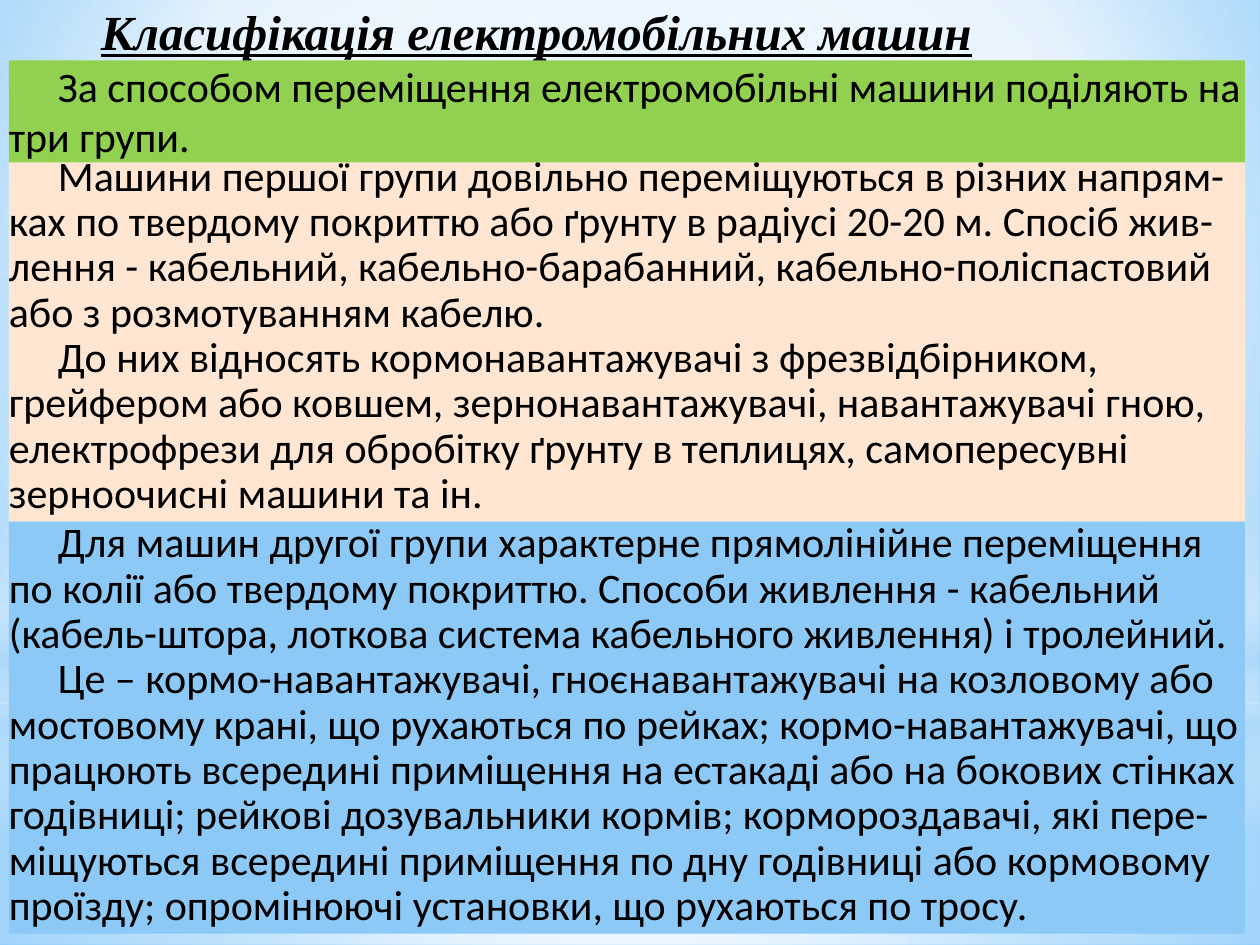
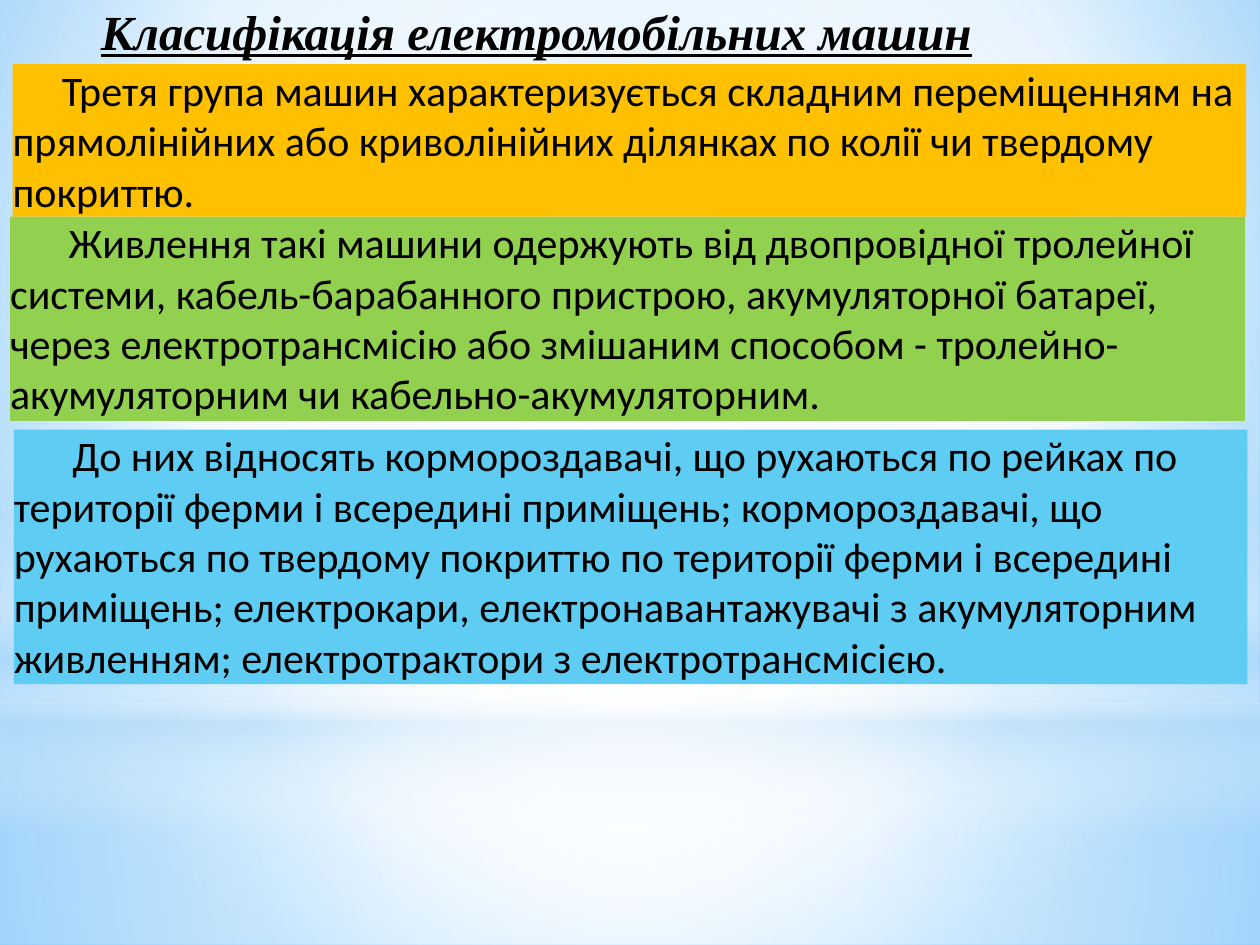
from dataclasses import dataclass

from pptx import Presentation
from pptx.dml.color import RGBColor
from pptx.enum.shapes import MSO_SHAPE as Shape
from pptx.enum.text import MSO_ANCHOR as Anchor, MSO_AUTO_SIZE as AutoSize, PP_ALIGN as Align
from pptx.oxml import parse_xml
from pptx.oxml.ns import nsdecls, qn
from pptx.util import Inches, Pt


@dataclass(frozen=True)
class Theme:
    text: str = "000000"
    white: str = "FFFFFF"
    haze: str = "B4DCFA"
    sky_inner: str = "9ED5FF"
    sky_outer: str = "5BB9FF"
    green: str = "92D050"
    peach: str = "FFE6D3"
    blue: str = "8CC9F7"
    amber: str = "FFC000"
    cyan: str = "5ECCF3"
    title_font: str = "Times New Roman"
    body_font: str = "Calibri"
    title_size: int = 28
    body_size: int = 24
    indent: float = 0.39


THEME = Theme()
TITLE = "Класифікація електромобільних машин"
TITLE_BOX = (0.8, 0.01, 6.99, 0.47)
CENTRE = (50, 50, 50, 50)

# Master haze: preset, box, gradient stops (position, colour, opacity), focus
HAZE = [
    (Shape.RECTANGLE, (0, 5.58, 10, 1.92),
     [(0, THEME.white, 91), (37, THEME.white, 76), (100, THEME.haze, 79)], CENTRE),
    (Shape.RECTANGLE, (0, 0, 10, 5.58),
     [(0, THEME.white, 89), (48, THEME.white, 62), (100, THEME.haze, 79)], CENTRE),
    (Shape.RECTANGLE, (0, 4.12, 10, 2.5),
     [(0, THEME.white, 0), (29, THEME.white, 30), (45, THEME.haze, 40),
      (55, THEME.white, 26), (65, THEME.haze, 60), (100, THEME.white, 0)], None),
    (Shape.OVAL, (0, 1.75, 10, 5.58),
     [(0, THEME.white, 100), (56, THEME.white, 0)], CENTRE),
]

# Panels of each slide, from back to front: box, colour, line spacing, paragraphs
GROUPS_ONE_AND_TWO = [
    ((0.07, 1.23, 9.81, 2.91), THEME.peach, 0.9, [
        "Машини першої групи довільно переміщуються в різних напрям-ках по твердому "
        "покриттю або ґрунту в радіусі 20-20 м. Спосіб жив-лення - кабельний, "
        "кабельно-барабанний, кабельно-поліспастовий або з розмотуванням кабелю.",
        "До них відносять кормонавантажувачі з фрезвідбірником, грейфером або ковшем, "
        "зернонавантажувачі, навантажувачі гною, електрофрези для обробітку ґрунту в "
        "теплицях, самопересувні зерноочисні машини та ін."]),
    ((0.07, 4.14, 9.81, 3.27), THEME.blue, 0.9, [
        "Для машин другої групи характерне прямолінійне переміщення по колії або твердому "
        "покриттю. Способи живлення - кабельний (кабель-штора, лоткова система кабельного "
        "живлення) і тролейний.",
        "Це – кормо-навантажувачі, гноєнавантажувачі на козловому або мостовому крані, що "
        "рухаються по рейках; кормо-навантажувачі, що працюють всередині приміщення на "
        "естакаді або на бокових стінках годівниці; рейкові дозувальники кормів; "
        "кормороздавачі, які пере-міщуються всередині приміщення по дну годівниці або "
        "кормовому проїзду; опромінюючі установки, що рухаються по тросу."]),
    ((0.07, 0.48, 9.81, 0.81), THEME.green, 1.0, [
        "За способом переміщення електромобільні машини поділяють на три групи."]),
]
GROUP_THREE = [
    ((0.08, 1.72, 9.8, 1.62), THEME.green, 1.0, [
        " Живлення такі машини одержують від двопровідної тролейної системи, "
        "кабель-барабанного пристрою, акумуляторної батареї, через електротрансмісію або "
        "змішаним способом - тролейно-акумуляторним чи кабельно-акумуляторним."]),
    ((0.1, 0.51, 9.79, 1.21), THEME.amber, 1.0, [
        "Третя група машин характеризується складним переміщенням на прямолінійних або "
        "криволінійних ділянках по колії чи твердому покриттю."]),
    ((0.11, 3.41, 9.79, 2.02), THEME.cyan, 1.0, [
        " До них відносять кормороздавачі, що рухаються по рейках по території ферми і "
        "всередині приміщень; кормороздавачі, що рухаються по твердому покриттю по "
        "території ферми і всередині приміщень; електрокари, електронавантажувачі з "
        "акумуляторним живленням; електротрактори з електротрансмісією."]),
]


def inches(box):
    return [Inches(length) for length in box]


def set_gradient(owner, stops, focus):
    """Fill a shape or a background; without a focus the gradient runs downwards."""
    owner.fill.gradient()
    stop_xml = "".join(
        f'<a:gs pos="{position * 1000}"><a:srgbClr val="{colour}">'
        f'<a:alpha val="{opacity * 1000}"/></a:srgbClr></a:gs>'
        for position, colour, opacity in stops)
    if focus:
        left, top, right, bottom = (side * 1000 for side in focus)
        direction = (f'<a:path path="circle"><a:fillToRect l="{left}" t="{top}" '
                     f'r="{right}" b="{bottom}"/></a:path>')
    else:
        direction = '<a:lin ang="5400000" scaled="0"/>'
    return parse_xml(f'<a:gradFill {nsdecls("a")} rotWithShape="1">'
                     f'<a:gsLst>{stop_xml}</a:gsLst>{direction}</a:gradFill>')


def apply_gradient(owner, element, stops, focus):
    gradient = set_gradient(owner, stops, focus)
    default = next(element.iter(qn("a:gradFill")))
    default.getparent().replace(default, gradient)


def add_plain_shape(slide, preset, box):
    shape = slide.shapes.add_shape(preset, *inches(box))
    shape.shadow.inherit = False
    shape.line.fill.background()
    return shape


def build_master(master, slide):
    """Sky background and haze, drawn on a slide and moved to the master."""
    sky = [(0, THEME.sky_inner, 100), (60, THEME.white, 100), (100, THEME.sky_outer, 100)]
    apply_gradient(master.background, master.element, sky, (20, 10, 20, 60))
    tree = master.shapes.element
    for index, (preset, box, stops, focus) in enumerate(HAZE):
        shape = add_plain_shape(slide, preset, box)
        apply_gradient(shape, shape.element, stops, focus)
        shape.element.nvSpPr.cNvPr.set("id", str(20 + index))
        tree.insert(2 + index, shape.element)


def prepare_frame(shape, wrap):
    frame = shape.text_frame
    frame.margin_left = frame.margin_top = frame.margin_right = frame.margin_bottom = 0
    frame.vertical_anchor = Anchor.TOP
    frame.word_wrap = wrap
    frame.auto_size = AutoSize.SHAPE_TO_FIT_TEXT
    return frame


def write_paragraph(paragraph, text, font_name, size):
    paragraph.text = text
    paragraph.alignment = Align.LEFT
    font = paragraph.runs[0].font
    font.name, font.size = font_name, Pt(size)
    font.color.rgb = RGBColor.from_string(THEME.text)
    return font


def add_panel(slide, box, colour, spacing, texts):
    panel = add_plain_shape(slide, Shape.RECTANGLE, box)
    panel.fill.solid()
    panel.fill.fore_color.rgb = RGBColor.from_string(colour)
    frame = prepare_frame(panel, wrap=True)
    for index, text in enumerate(texts):
        paragraph = frame.add_paragraph() if index else frame.paragraphs[0]
        write_paragraph(paragraph, text, THEME.body_font, THEME.body_size)
        paragraph.line_spacing = spacing
        # First-line indent
        paragraph._p.get_or_add_pPr().set("indent", str(Inches(THEME.indent)))


def add_title(slide, box):
    frame = prepare_frame(slide.shapes.add_textbox(*inches(box)), wrap=False)
    font = write_paragraph(frame.paragraphs[0], TITLE, THEME.title_font, THEME.title_size)
    font.bold = font.italic = font.underline = True


def build_slide(slide, panels):
    for panel in panels:
        add_panel(slide, *panel)
    add_title(slide, TITLE_BOX)


def main():
    presentation = Presentation()
    presentation.slide_width, presentation.slide_height = Inches(10), Inches(7.5)
    blank = presentation.slide_layouts[6]
    slides = [presentation.slides.add_slide(blank) for _ in range(2)]
    build_master(presentation.slide_master, slides[0])
    for slide, panels in zip(slides, (GROUPS_ONE_AND_TWO, GROUP_THREE)):
        build_slide(slide, panels)
    presentation.save("out.pptx")


if __name__ == "__main__":
    main()
